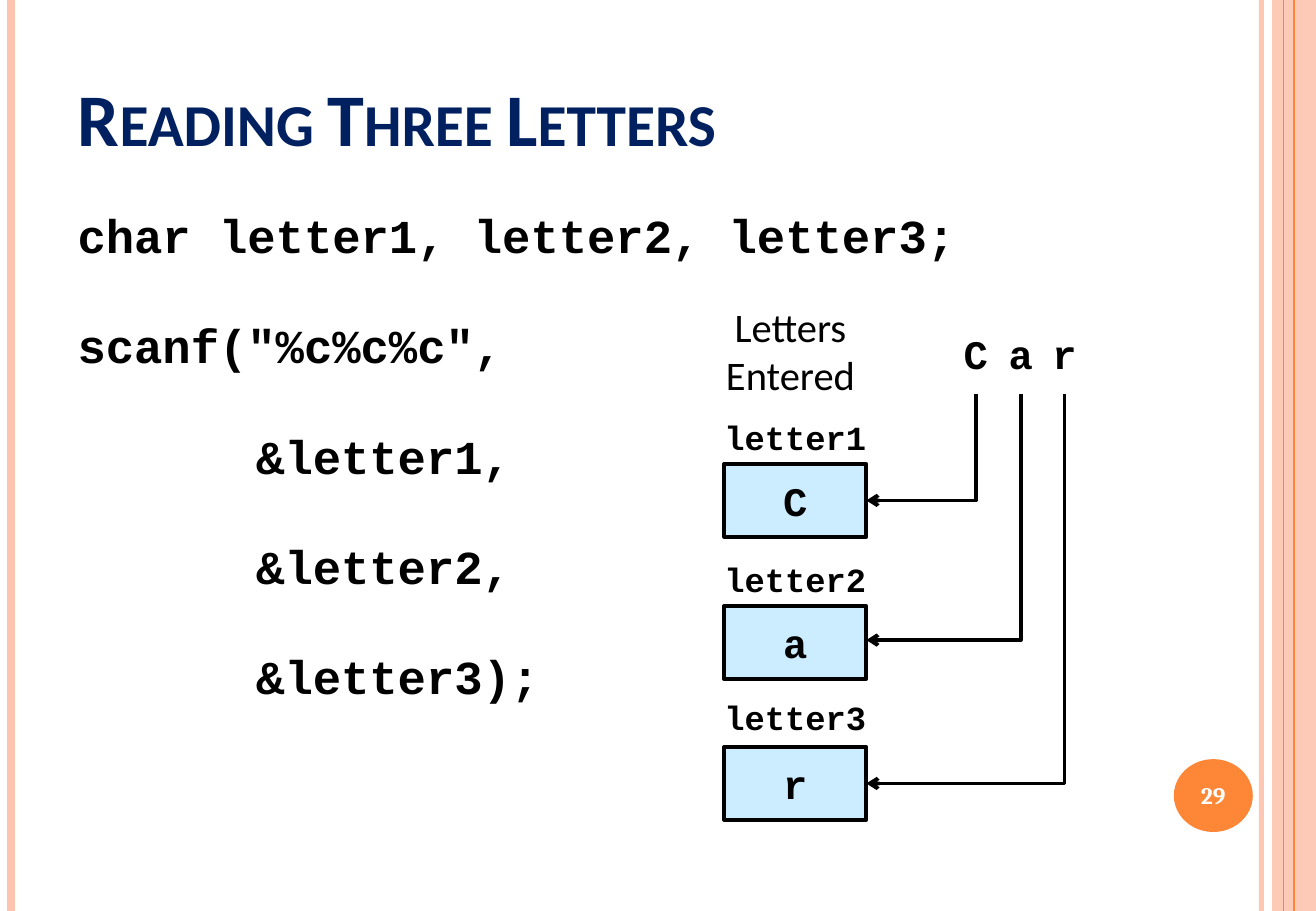
from lxml.etree import SubElement
from pptx import Presentation
from pptx.dml.color import RGBColor
from pptx.enum.shapes import MSO_CONNECTOR, MSO_SHAPE
from pptx.enum.text import MSO_ANCHOR, PP_ALIGN
from pptx.oxml.ns import qn
from pptx.util import Pt

SCALE = 9144
BLACK = RGBColor(0, 0, 0)
WHITE = RGBColor(255, 255, 255)
NAVY = RGBColor(0x00, 0x20, 0x60)
SKY = RGBColor(0xCC, 0xEC, 0xFF)
PEACH = RGBColor(0xFE, 0xC3, 0xAE)
ORANGE = RGBColor(0xFE, 0x86, 0x37)
MONO = "Courier New"
SANS = "Calibri"
CODE = (
    ("char letter1, letter2, letter3;", 0),
    ('scanf("%c%c%c",', 0),
    ("&letter1,", 147),
    ("&letter2,", 147),
    ("&letter3);", 147),
)
RAILS = ((1038, 3, PEACH, 93), (9, 4.5, PEACH, 100),
         (1065, 1.5, ORANGE, 100), (1056, 0.75, ORANGE, 100))
CELLS = (("C", "letter1", 336, 382, 412, 803),
         ("a", "letter2", 453, 499, 527, 840),
         ("r", "letter3", 567, 615, 645, 876))


def px(*sizes):
    return [size * SCALE for size in sizes]


def style(para, face, size, color=BLACK, bold=True):
    for run in para.runs:
        font = run.font
        font.name, font.size, font.bold = face, Pt(size), bold
        font.color.rgb = color


def fade(fill, share):
    tint = fill.fore_color._xFill.find(qn("a:srgbClr"))
    SubElement(tint, qn("a:alpha"), val=str(share * 1000))


def add_rail(slide, left, width, color, share):
    rail = slide.shapes.add_connector(
        MSO_CONNECTOR.STRAIGHT, *px(left, 0, left, 750))
    rail.line.width = Pt(width)
    rail.line.color.rgb = color
    if share < 100:
        fade(rail.line.fill, share)
    SubElement(rail._element.spPr, qn("a:effectLst"))


def add_block(slide, kind, area, fill, edge=None):
    block = slide.shapes.add_shape(kind, *px(*area))
    block.shadow.inherit = False
    block.fill.solid()
    block.fill.fore_color.rgb = fill
    if edge is None:
        block.line.fill.background()
    else:
        block.line.color.rgb = edge
        block.line.width = Pt(2.25)
    return block


def write(shape, text, face, size, color=BLACK, bold=True):
    frame = shape.text_frame
    frame.word_wrap = True
    frame.margin_left = frame.margin_right = 0
    frame.vertical_anchor = MSO_ANCHOR.MIDDLE
    frame.text = text
    para = frame.paragraphs[0]
    para.alignment = PP_ALIGN.CENTER
    style(para, face, size, color, bold)


def add_title(slide):
    title = slide.shapes.title
    title.left, title.top, title.width, title.height = px(54, 30, 885, 103)
    frame = title.text_frame
    frame.text = "Reading Three Letters"
    frame.vertical_anchor = MSO_ANCHOR.BOTTOM
    frame.margin_bottom = 0
    para = frame.paragraphs[0]
    para.alignment = PP_ALIGN.LEFT
    style(para, SANS, 44, NAVY)
    para.runs[0].font._element.set("cap", "small")


def add_code(slide):
    frame = slide.shapes.add_textbox(*px(54, 158, 885, 450)).text_frame
    frame.word_wrap = True
    frame.margin_top = 12 * SCALE
    frame.text = "\n".join(text for text, _ in CODE)
    for row, (para, (_, indent)) in enumerate(zip(frame.paragraphs, CODE)):
        para.space_before = Pt(31.7 if row else 0)
        para._p.get_or_add_pPr().set("marL", str(indent * SCALE))
        style(para, MONO, 28)


def add_arrow(slide, center, level):
    path = slide.shapes.build_freeform(713, level, SCALE)
    path.add_line_segments([(center, level), (center, 324)], close=False)
    arrow = path.convert_to_shape()
    arrow.shadow.inherit = False
    arrow.fill.background()
    arrow.line.color.rgb = BLACK
    arrow.line.width = Pt(2.25)
    SubElement(arrow.line._get_or_add_ln(), qn("a:headEnd"), type="arrow")


def add_cell(slide, letter, name, top, base, level, center):
    label = add_block(slide, MSO_SHAPE.RECTANGLE, (587, top, 135, 47), WHITE)
    write(label, name, MONO, 20)
    box = add_block(slide, MSO_SHAPE.RECTANGLE, (596, base, 117, 60), SKY, BLACK)
    write(box, letter, MONO, 24)
    add_arrow(slide, center, level)
    key = slide.shapes.add_textbox(*px(center - 27, 267, 54, 47))
    write(key, letter, MONO, 24)


def main():
    deck = Presentation()
    deck.slide_width, deck.slide_height = px(1083, 750)
    slide = deck.slides.add_slide(deck.slide_layouts[5])
    band = add_block(slide, MSO_SHAPE.RECTANGLE, (1047, 0, 36, 750), PEACH)
    fade(band.fill, 87)
    for rail in RAILS:
        add_rail(slide, *rail)
    add_title(slide)
    add_code(slide)
    badge = add_block(slide, MSO_SHAPE.OVAL, (966, 625, 65, 60), ORANGE)
    write(badge, "29", "Cambria", 14, WHITE)
    head = add_block(slide, MSO_SHAPE.RECTANGLE, (570, 244, 161, 89), WHITE)
    write(head, "Letters Entered", SANS, 24, bold=False)
    for cell in CELLS:
        add_cell(slide, *cell)
    deck.save("out.pptx")


if __name__ == "__main__":
    main()
